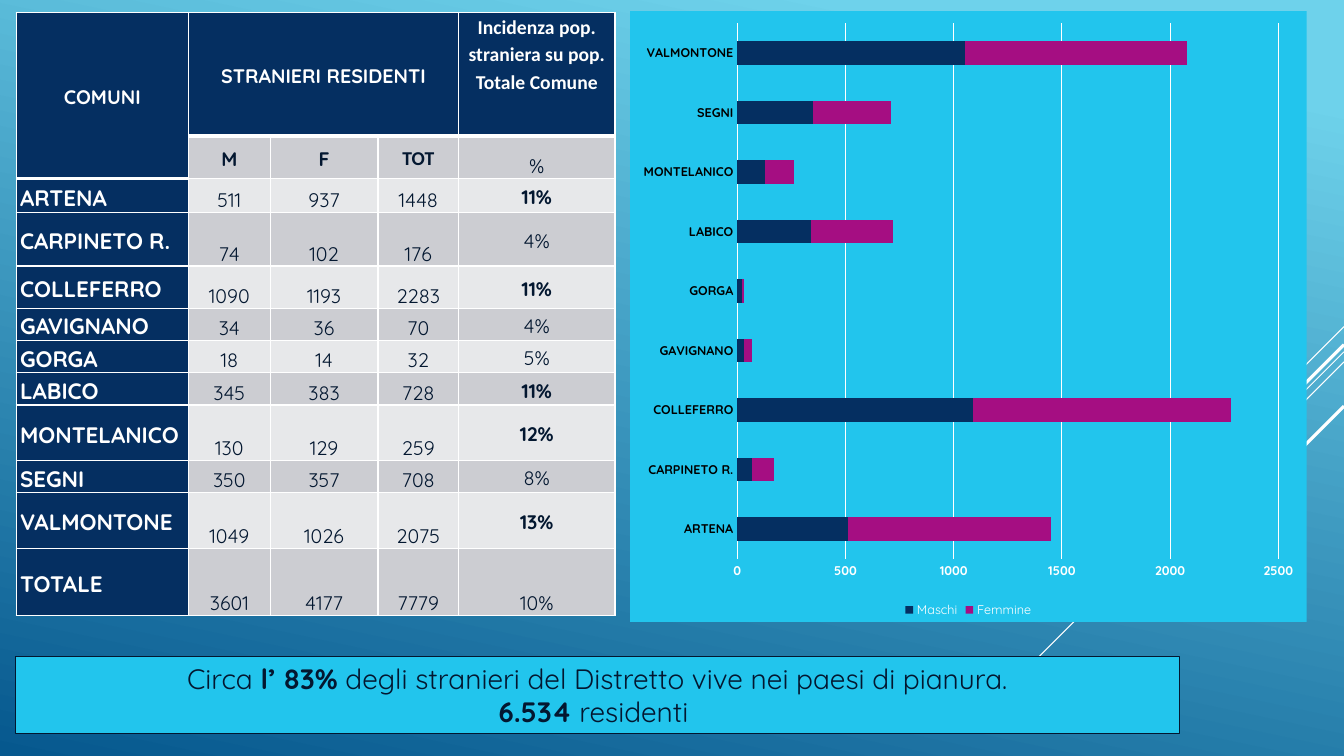
from itertools import product

from pptx import Presentation
from pptx.chart.data import CategoryChartData
from pptx.dml.color import RGBColor
from pptx.enum.chart import XL_CHART_TYPE as ChartType, XL_LEGEND_POSITION as LegendSide
from pptx.enum.chart import XL_TICK_MARK as TickMark
from pptx.enum.shapes import MSO_CONNECTOR as Connector, MSO_SHAPE as Shape
from pptx.enum.text import MSO_ANCHOR as Anchor, PP_ALIGN as Align
from pptx.oxml import parse_xml
from pptx.oxml.ns import nsdecls, qn
from pptx.util import Inches, Pt

NAVY, INK, WHITE, BLACK = "052F61", "031730", "FFFFFF", "000000"
CYAN, MAGENTA = "22C5ED", "A50E82"
BANDS = ("E7E8EA", "CCCDD2")
QUICKSAND, CALIBRI = "Quicksand", "Calibri"

COLUMNS = (1.71, 0.81, 1.07, 0.8, 1.55)
ROWS = (1.23, 0.42, 0.34, 0.53, 0.42, 0.32, 0.32, 0.32, 0.55, 0.32, 0.55, 0.67)
TOWNS = [
    ("ARTENA", 511, 937, 1448, "11%"),
    ("CARPINETO R.", 74, 102, 176, "4%"),
    ("COLLEFERRO", 1090, 1193, 2283, "11%"),
    ("GAVIGNANO", 34, 36, 70, "4%"),
    ("GORGA", 18, 14, 32, "5%"),
    ("LABICO", 345, 383, 728, "11%"),
    ("MONTELANICO", 130, 129, 259, "12%"),
    ("SEGNI", 350, 357, 708, "8%"),
    ("VALMONTONE", 1049, 1026, 2075, "13%"),
]
TOTAL = ("TOTALE", 3601, 4177, 7779, "10%")
HEADINGS = {
    (0, 0): "COMUNI",
    (0, 1): "STRANIERI RESIDENTI",
    (0, 4): "Incidenza pop. straniera su pop. Totale Comune",
    (1, 1): "M",
    (1, 2): "F",
    (1, 3): "TOT",
    (1, 4): "%",
}
RAYS = [(3.24, 1, 0.75), (3.49, 3.26, 0.75), (3.59, 2.07, 0.75), (3.42, 1.91, 2.25), (4.03, 1.39, 2.25)]


def rgb(value):
    return RGBColor.from_string(value)


def style(font, size, color, bold=False, name=QUICKSAND):
    for key, value in {"size": Pt(size), "bold": bold, "name": name}.items():
        setattr(font, key, value)
    font.color.rgb = rgb(color)


def paint_background(slide):
    fill = slide.background.fill
    fill.gradient()
    fill.gradient_angle = 258
    for stop, (position, color) in zip(fill.gradient_stops, ((0.1, "6ED2EB"), (1, "06588E"))):
        stop.position = position
        stop.color.rgb = rgb(color)


def draw_rays(slide, right):
    for top, reach, weight in RAYS:
        ends = (Inches(n) for n in (right, top, right - reach, top + reach))
        ray = slide.shapes.add_connector(Connector.STRAIGHT, *ends)
        ray.line.color.rgb = rgb(WHITE)
        ray.line.width = Pt(weight)
        ray.element.spPr.append(parse_xml(f"<a:effectLst {nsdecls('a')}/>"))


def border(cell, top, bottom):
    properties = cell._tc.get_or_add_tcPr()
    for index, (side, weight) in enumerate(zip("LRTB", (1, 1, top, bottom))):
        properties.insert(index, parse_xml(
            f'<a:ln{side} {nsdecls("a")} w="{Pt(weight)}"><a:solidFill>'
            f'<a:srgbClr val="{WHITE}"/></a:solidFill></a:ln{side}>'))


def write_cell(cell, text, fill, look, anchor, align, inset):
    cell.fill.solid()
    cell.fill.fore_color.rgb = rgb(fill)
    margins = {"margin_left": inset, "margin_right": inset, "margin_top": 0, "margin_bottom": 0}
    for key, value in margins.items():
        setattr(cell, key, Inches(value))
    cell.vertical_anchor = anchor
    paragraph = cell.text_frame.paragraphs[0]
    for key, value in {"alignment": align, "line_spacing": 1.15, "space_after": Pt(10)}.items():
        setattr(paragraph, key, value)
    run = paragraph.add_run()
    run.text = str(text)
    style(run.font, **look)


def write_heading(cell, row, column, text):
    look = {
        "size": 14,
        "color": INK if row else WHITE,
        "bold": text != "%",
        "name": CALIBRI if (row, column) in ((0, 4), (1, 3)) else QUICKSAND,
    }
    anchor = Anchor.BOTTOM if text == "%" else Anchor.TOP if (row, column) == (0, 4) else Anchor.MIDDLE
    write_cell(cell, text, BANDS[1] if row else NAVY, look, anchor, Align.CENTER, 0.04)


def write_record(cells, record, band):
    name, *counts, share = record
    name_look = {"size": 16, "color": WHITE, "bold": True}
    count_look = {"size": 14, "color": INK}
    share_look = {**count_look, "bold": record != TOTAL and int(share.rstrip("%")) > 10}
    write_cell(cells[0], name, NAVY, name_look, Anchor.MIDDLE, Align.LEFT, 0.04)
    for cell, count in zip(cells[1:], counts):
        write_cell(cell, count, band, count_look, Anchor.BOTTOM, Align.CENTER, 0.05)
    share_anchor = Anchor.BOTTOM if record == TOTAL else Anchor.MIDDLE
    write_cell(cells[4], share, band, share_look, share_anchor, Align.CENTER, 0.01)


def add_residents_table(slide, box):
    frame = slide.shapes.add_table(len(ROWS), len(COLUMNS), *map(Inches, box))
    residents = frame.table
    residents.first_row = residents.horz_banding = False
    for column, share in zip(residents.columns, COLUMNS):
        column.width = Inches(box[2] * share / sum(COLUMNS))
    for row, share in zip(residents.rows, ROWS):
        row.height = Inches(box[3] * share / sum(ROWS))
    residents.cell(0, 0).merge(residents.cell(1, 0))
    residents.cell(0, 1).merge(residents.cell(0, 3))
    for (row, column), text in HEADINGS.items():
        write_heading(residents.cell(row, column), row, column, text)
    for index, record in enumerate(TOWNS + [TOTAL]):
        cells = [residents.cell(index + 2, column) for column in range(len(COLUMNS))]
        write_record(cells, record, BANDS[index % 2])
    for row, column in product(range(len(ROWS)), range(len(COLUMNS))):
        heading_end = 1 if column == 0 else 0
        top = 3 if row == heading_end + 1 else 1
        bottom = 3 if row in (0, heading_end) else 1
        border(residents.cell(row, column), top, bottom)


def add_residents_chart(slide, box):
    data = CategoryChartData()
    data.categories = [town[0] for town in TOWNS]
    for column, name in enumerate(("Maschi", "Femmine"), 1):
        data.add_series(name, [round(town[column], -1) for town in TOWNS])
    chart = slide.shapes.add_chart(ChartType.BAR_STACKED, *map(Inches, box), data).chart
    style(chart.font, 10, WHITE)
    chart.has_title = False
    chart.has_legend = True
    chart.legend.position = LegendSide.BOTTOM
    chart.legend.include_in_layout = False
    style(chart.legend.font, 9, WHITE)
    bars = chart.plots[0]
    for key, value in {"gap_width": 150, "overlap": 100, "vary_by_categories": False}.items():
        setattr(bars, key, value)
    for series, color in zip(bars.series, (NAVY, MAGENTA)):
        series.format.fill.solid()
        series.format.fill.fore_color.rgb = rgb(color)
    towns, people = chart.category_axis, chart.value_axis
    for axis, color in ((towns, BLACK), (people, WHITE)):
        axis.major_tick_mark = axis.minor_tick_mark = TickMark.NONE
        style(axis.tick_labels.font, 9, color, True)
    people.minimum_scale, people.maximum_scale, people.major_unit = 0, 2500, 500
    people.has_major_gridlines = True
    people.format.line.fill.background()
    for line in (towns.format.line, people.major_gridlines.format.line):
        line.color.rgb = rgb(WHITE)
        line.width = Pt(0.75)
    chart.element.find(qn("c:chart")).addnext(parse_xml(
        f'<c:spPr {nsdecls("c", "a")}><a:solidFill><a:srgbClr val="{CYAN}"/></a:solidFill>'
        "<a:ln><a:noFill/></a:ln></c:spPr>"))


def add_conclusion(slide, box):
    banner = slide.shapes.add_shape(Shape.RECTANGLE, *map(Inches, box))
    banner.shadow.inherit = False
    banner.fill.solid()
    banner.fill.fore_color.rgb = rgb(CYAN)
    banner.line.color.rgb = rgb(INK)
    banner.line.width = Pt(0.75)
    message = banner.text_frame
    message.word_wrap = True
    message.vertical_anchor = Anchor.MIDDLE
    lines = [
        [("Circa ", False), ("l’ 83%", True), (" degli stranieri del Distretto vive nei paesi di pianura.", False)],
        [("6.534", True), (" residenti ", False)],
    ]
    for index, line in enumerate(lines):
        paragraph = message.add_paragraph() if index else message.paragraphs[0]
        paragraph.alignment = Align.CENTER
        for text, bold in line:
            run = paragraph.add_run()
            run.text = text
            style(run.font, 20, INK, bold)


def main():
    deck = Presentation()
    deck.slide_width, deck.slide_height = Inches(13.33), Inches(7.5)
    slide = deck.slides.add_slide(deck.slide_layouts[6])
    paint_background(slide)
    draw_rays(slide, 13.33)
    add_residents_table(slide, (0.16, 0.12, 5.94, 5.99))
    add_conclusion(slide, (0.15, 6.51, 11.55, 0.77))
    add_residents_chart(slide, (6.25, 0.11, 6.71, 6.06))
    deck.save("out.pptx")


if __name__ == "__main__":
    main()
